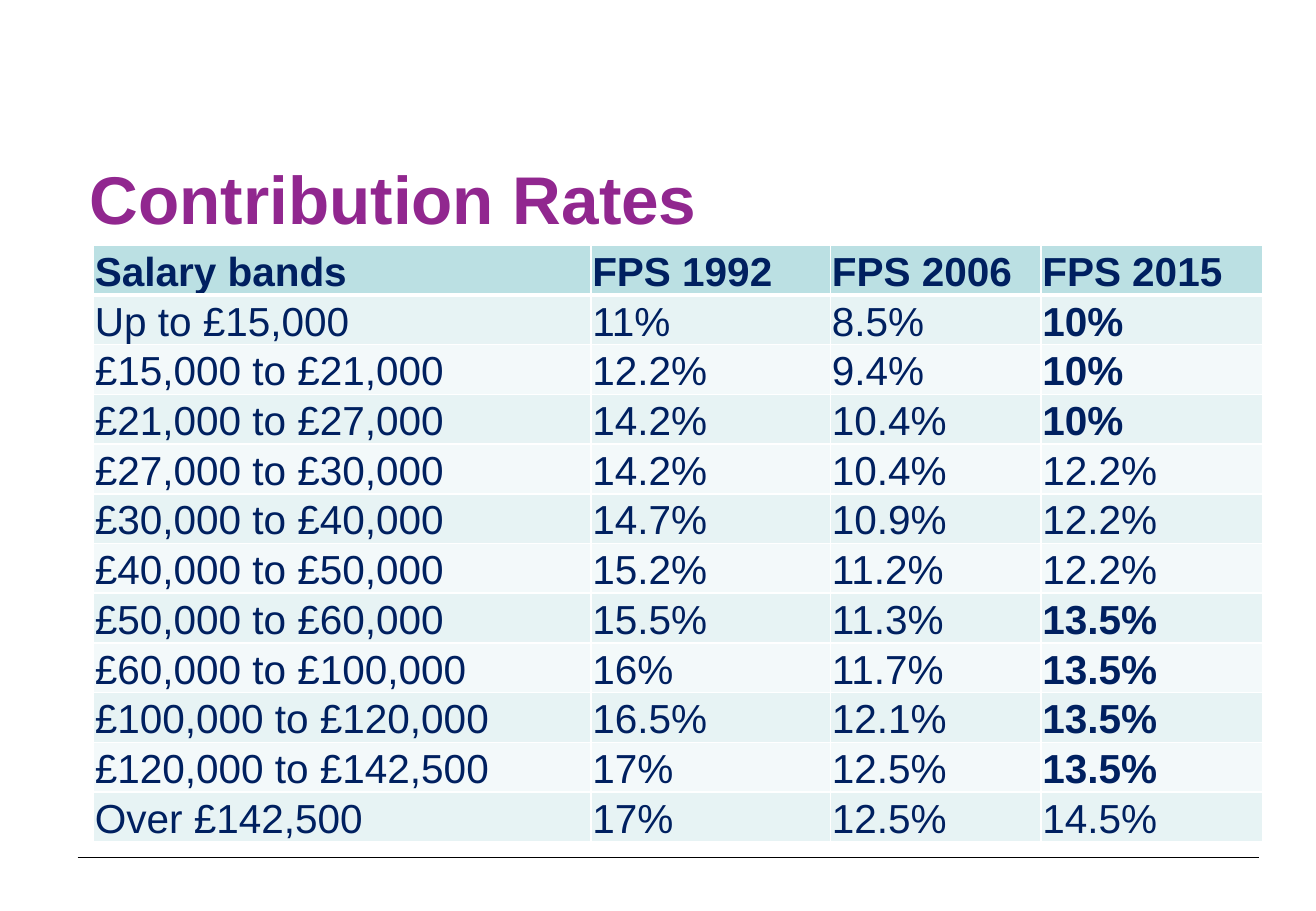
from lxml.etree import SubElement
from pptx import Presentation
from pptx.dml.color import RGBColor
from pptx.enum.shapes import MSO_CONNECTOR as Link
from pptx.enum.text import MSO_ANCHOR as Anchor, PP_ALIGN as Align
from pptx.oxml import parse_xml
from pptx.oxml.ns import nsdecls, qn
from pptx.util import Inches, Pt

NAVY, PURPLE, WHITE = "002060", "91278F", "FFFFFF"
HEAD, BANDS = "BBE0E3", ("E7F3F4", "F3F9FA")
WIDTHS = (4.09, 1.97, 1.73, 1.82)
STRONG = ("10%", "13.5%")
RATES = (
    ("Salary bands", "FPS 1992", "FPS 2006", "FPS 2015"),
    ("Up to £15,000", "11%", "8.5%", "10%"),
    ("£15,000 to £21,000", "12.2%", "9.4%", "10%"),
    ("£21,000 to £27,000", "14.2%", "10.4%", "10%"),
    ("£27,000 to £30,000", "14.2%", "10.4%", "12.2%"),
    ("£30,000 to £40,000", "14.7%", "10.9%", "12.2%"),
    ("£40,000 to £50,000", "15.2%", "11.2%", "12.2%"),
    ("£50,000 to £60,000", "15.5%", "11.3%", "13.5%"),
    ("£60,000 to £100,000", "16%", "11.7%", "13.5%"),
    ("£100,000 to £120,000", "16.5%", "12.1%", "13.5%"),
    ("£120,000 to £142,500", "17%", "12.5%", "13.5%"),
    ("Over £142,500", "17%", "12.5%", "14.5%"),
)


def color(code):
    return RGBColor.from_string(code)


def style(par, size, code, bold):
    par.alignment = Align.LEFT
    for run in par.runs:
        font = run.font
        font.name, font.size, font.bold = "Arial", Pt(size), bold
        font.color.rgb = color(code)


def edge(cell, top, base):
    """Draw white borders on all four sides of a cell."""
    props = cell._tc.get_or_add_tcPr()
    sides = (("L", 1), ("R", 1), ("T", top), ("B", base))
    for spot, (side, width) in enumerate(sides):
        props.insert(spot, parse_xml(
            f'<a:ln{side} {nsdecls("a")} w="{Pt(width)}"><a:solidFill>'
            f'<a:srgbClr val="{WHITE}"/></a:solidFill></a:ln{side}>'))


def add_title(slide, left, top, width, height):
    title = slide.shapes.title
    title.left, title.top = Inches(left), Inches(top)
    title.width, title.height = Inches(width), Inches(height)
    frame = title.text_frame
    frame.text = "Contribution Rates"
    frame.vertical_anchor = Anchor.MIDDLE
    style(frame.paragraphs[0], 40, PURPLE, True)


def add_rates(slide, left, top, width, height):
    table = slide.shapes.add_table(
        len(RATES), len(WIDTHS), Inches(left), Inches(top),
        Inches(width), Inches(height)).table
    for col, size in zip(table.columns, WIDTHS):
        col.width = Inches(size * width / sum(WIDTHS))
    for r, row in enumerate(RATES):
        for c, text in enumerate(row):
            cell = table.cell(r, c)
            cell.text_frame.text = text
            cell.vertical_anchor = Anchor.BOTTOM
            cell.margin_left = cell.margin_right = Inches(0.01)
            cell.margin_top, cell.margin_bottom = Inches(0.01), 0
            cell.fill.solid()
            cell.fill.fore_color.rgb = color(BANDS[(r - 1) % 2] if r else HEAD)
            edge(cell, 3 if r == 1 else 1, 1 if r else 3)
            style(cell.text_frame.paragraphs[0], 24, NAVY,
                  r == 0 or text in STRONG)


def add_rule(slide, left, top, width):
    rule = slide.shapes.add_connector(
        Link.STRAIGHT, Inches(left), Inches(top),
        Inches(left + width), Inches(top))
    rule.line.color.rgb = color("000000")
    rule.line.width = Pt(0.75)
    SubElement(rule._element.spPr, qn("a:effectLst"))


def main():
    deck = Presentation()
    deck.slide_width, deck.slide_height = Inches(10.83), Inches(7.5)
    slide = deck.slides.add_slide(deck.slide_layouts[5])
    # Footer rule
    add_rule(slide, 0.64, 7.06, 9.72)
    # Heading
    add_title(slide, 0.64, 1.31, 9.75, 0.63)
    # Rates by salary band
    add_rates(slide, 0.77, 2.02, 9.62, 4.91)
    deck.save("out.pptx")


if __name__ == "__main__":
    main()
